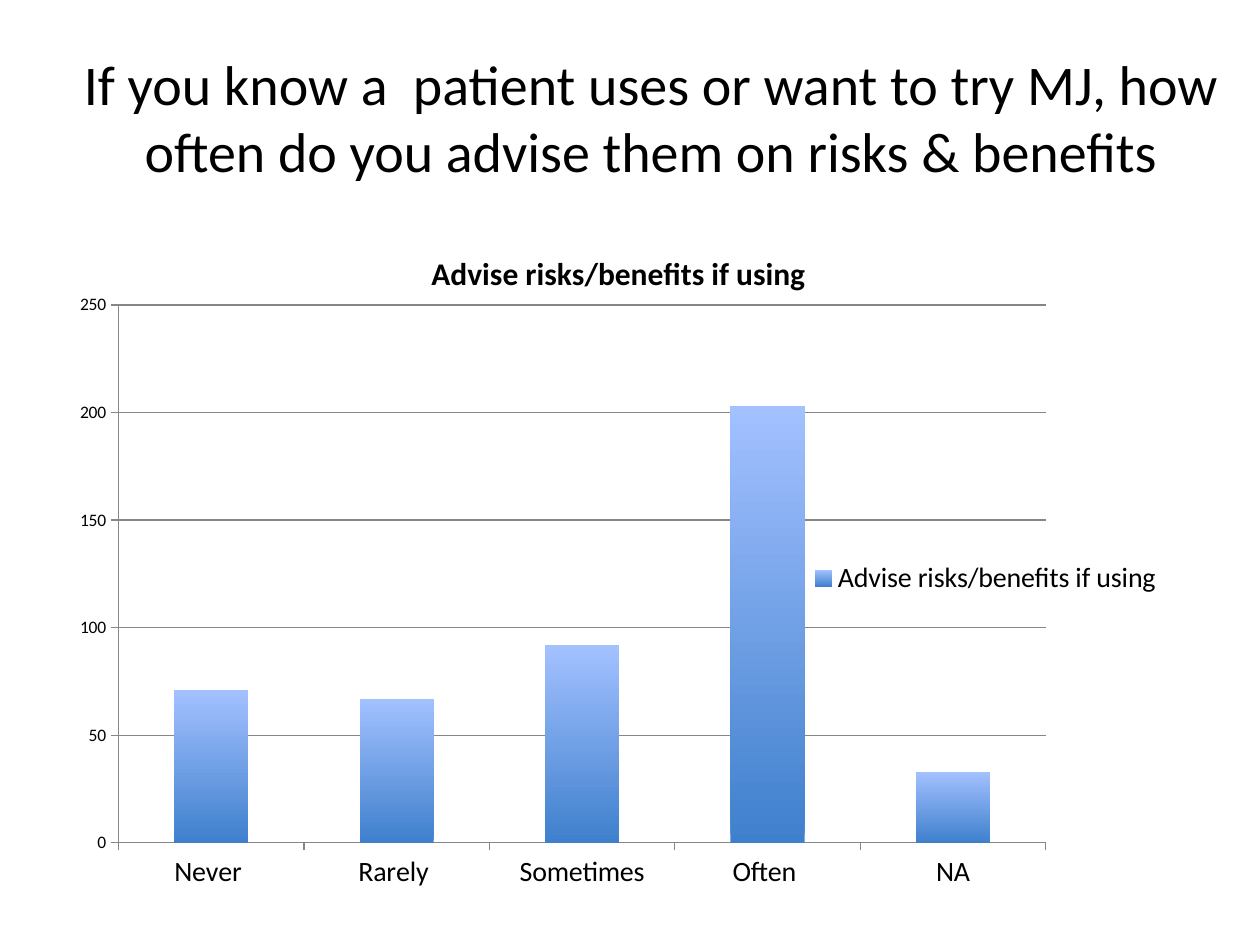
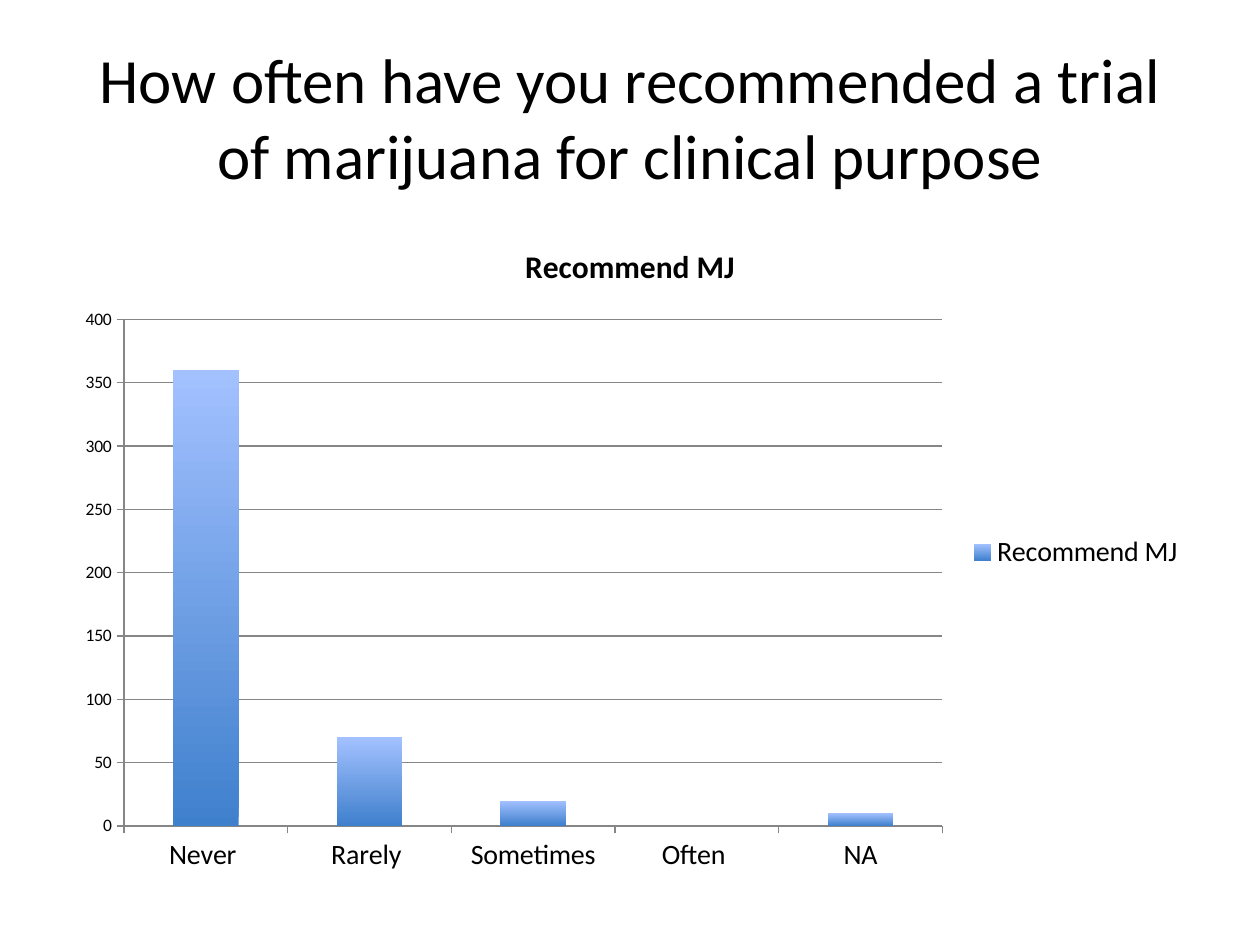
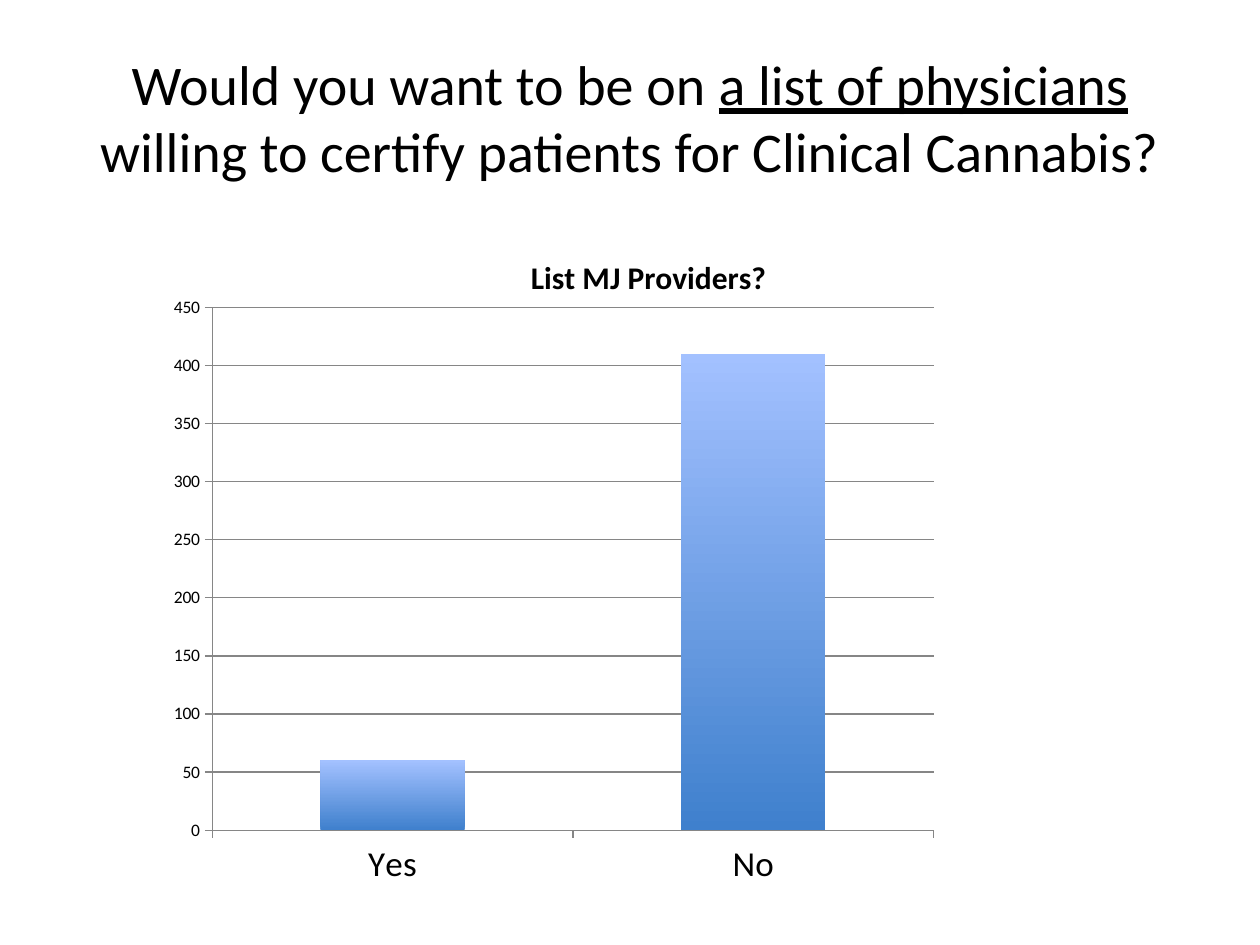
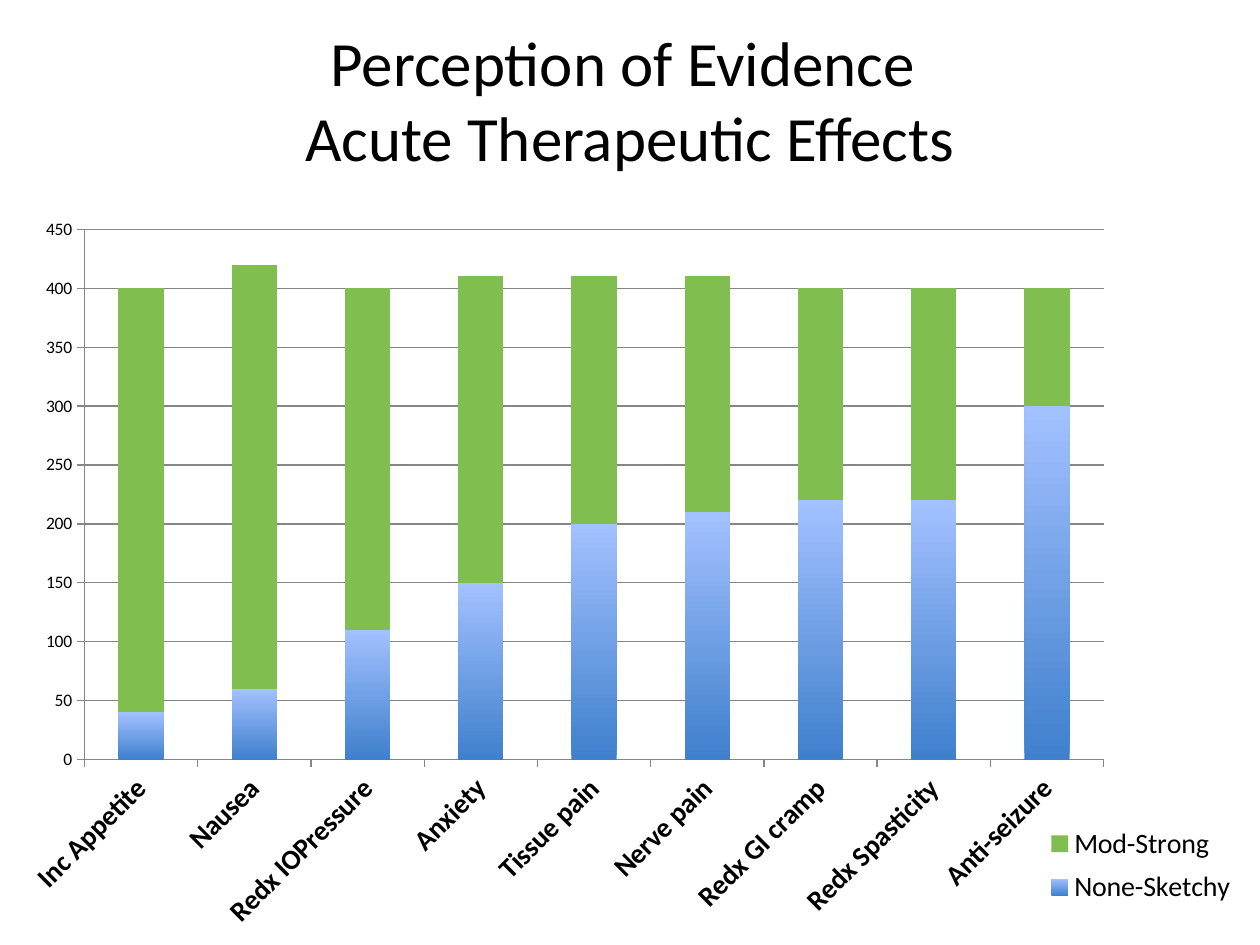
from lxml.etree import Element, SubElement
from pptx import Presentation
from pptx.chart.data import CategoryChartData
from pptx.dml.color import RGBColor
from pptx.enum.chart import XL_CHART_TYPE as CHART, XL_LEGEND_POSITION as LEGEND
from pptx.enum.chart import XL_TICK_MARK as TICK
from pptx.enum.text import MSO_ANCHOR as ANCHOR, PP_ALIGN as ALIGN
from pptx.oxml.ns import qn
from pptx.util import Pt

PX = 9144  # 100 px to the inch
FONT = "Calibri"
BLACK = RGBColor(0x00, 0x00, 0x00)
GRAY = RGBColor(0x86, 0x86, 0x86)
BLUE_DARK = RGBColor(0x3F, 0x80, 0xCD)
BLUE_LIGHT = RGBColor(0xA3, 0xC1, 0xFF)
GREEN = RGBColor(0x80, 0xBE, 0x50)

FREQUENCIES = ["Never ", "Rarely ", "Sometimes", "Often ", "NA"]
EFFECTS = ["Inc Appetite", "Nausea", "Redx IOPressure", "Anxiety", "Tissue pain",
           "Nerve pain", "Redx GI cramp", "Redx Spasticity", "Anti-seizure"]


def px(*lengths):
    return [n * PX for n in lengths]


def set_font(font, size, bold=False):
    font.name, font.size, font.bold = FONT, Pt(size), bold
    font.color.rgb = BLACK


def add_text(p, text, size, underline=False, bold=False):
    """Add a run; a newline in the text becomes a line break."""
    for i, line in enumerate(text.split("\n")):
        if i:
            p.add_line_break()
        r = p.add_run()
        r.text = line
        set_font(r.font, size, bold)
        if underline:
            r.font.underline = True


def add_title(slide, box, parts, size):
    """Parts are (text, underline) pairs."""
    tf = slide.shapes.add_textbox(*px(*box)).text_frame
    tf.word_wrap = True
    tf.vertical_anchor = ANCHOR.MIDDLE
    p = tf.paragraphs[0]
    p.alignment = ALIGN.CENTER
    for text, underline in parts:
        add_text(p, text, size, underline)


def set_layout(parent, index, box, chart_box, inner=False):
    """Place a chart part at a box in px from the chart's top left corner."""
    for old in parent.findall(qn("c:layout")):
        parent.remove(old)
    layout = Element(qn("c:layout"))
    parent.insert(index, layout)
    manual = SubElement(layout, qn("c:manualLayout"))
    width, height = chart_box[2:]
    fractions = [n / side for n, side in zip(box, (width, height) * 2)]
    values = [("layoutTarget", "inner")] if inner else []
    values += [("xMode", "edge"), ("yMode", "edge"), *zip("xywh", fractions)]
    for tag, value in values:
        SubElement(manual, qn(f"c:{tag}")).set("val", str(value))


def style_axes(chart, size, bold, angle):
    cat, val = chart.category_axis, chart.value_axis
    for axis in (cat, val):
        axis.major_tick_mark = TICK.OUTSIDE
        axis.format.line.color.rgb = GRAY
    set_font(cat.tick_labels.font, size, bold)
    if angle:
        body = cat._element.find(qn("c:txPr")).find(qn("a:bodyPr"))
        body.set("rot", str(angle * 60000))
    val.has_major_gridlines = True
    val.major_gridlines.format.line.color.rgb = GRAY


def fill_series(plot):
    plot.gap_width, plot.overlap = 150, 100
    plot.vary_by_categories = False
    first, *others = plot.series
    fill = first.format.fill
    fill.gradient()
    fill.gradient_angle = 90
    for stop, color in zip(fill.gradient_stops, (BLUE_DARK, BLUE_LIGHT)):
        stop.color.rgb = color
    for s in others:
        s.format.fill.solid()
        s.format.fill.fore_color.rgb = GREEN


def add_column_chart(slide, box, cats, series, title=None, plot_box=None, legend=True,
                     legend_box=None, cat_size=16, cat_bold=False, cat_angle=0):
    data = CategoryChartData()
    data.categories = cats
    for name, values in series.items():
        data.add_series(name, values)
    chart = slide.shapes.add_chart(CHART.COLUMN_STACKED, *px(*box), data).chart
    set_font(chart.font, 10)
    chart.has_title = title is not None
    if title:
        add_text(chart.chart_title.text_frame.paragraphs[0], title, 18, bold=True)
    style_axes(chart, cat_size, cat_bold, cat_angle)
    fill_series(chart.plots[0])
    if plot_box:
        set_layout(chart._chartSpace.chart.plotArea, 0, plot_box, box, inner=True)
    chart.has_legend = legend
    if legend:
        chart.legend.position = LEGEND.RIGHT
        chart.legend.include_in_layout = False
        set_font(chart.legend.font, 16)
        if legend_box:
            set_layout(chart.legend._element, 1, legend_box, box)


def add_chart_slide(prs, title_box, parts, size, chart_box, cats, series, **options):
    slide = prs.slides.add_slide(prs.slide_layouts[6])
    add_title(slide, title_box, parts, size)
    add_column_chart(slide, chart_box, cats, series, **options)


def main():
    prs = Presentation()
    prs.slide_width, prs.slide_height = px(1000, 750)

    advise = "Advise risks/benefits if using"
    add_chart_slide(
        prs, (50, 30, 934, 125),
        [("If you know a  patient uses or want to try MJ, how often do you advise "
          "them on risks & benefits", False)], 32,
        (50, 179, 882, 541), FREQUENCIES, {advise: (71, 67, 92, 203, 33)},
        title=advise, plot_box=(44, 63, 736, 427), legend_box=(603, 264, 273, 32))

    recommend = "Recommend MJ"
    add_chart_slide(
        prs, (50, 30, 900, 125),
        [("How often have you recommended a trial of marijuana for clinical purpose",
          False)], 36,
        (50, 174, 900, 529), FREQUENCIES, {recommend: (360, 70, 20, 0, 10)},
        title=recommend)

    providers = "List MJ Providers?"
    add_chart_slide(
        prs, (50, 30, 900, 125),
        [("Would you want to be on ", False), ("a list of physicians ", True),
         ("willing to certify patients for Clinical Cannabis?", False)], 32,
        (138, 182, 753, 537), ["Yes", "No"], {providers: (60, 410)},
        title=providers, plot_box=(30, 62, 573, 415), legend=False, cat_size=20)

    add_chart_slide(
        prs, (50, 16, 900, 125),
        [("Perception of Evidence \nAcute Therapeutic Effects", False)], 36,
        (15, 164, 971, 586), EFFECTS,
        {"None-Sketchy": (40, 60, 110, 150, 200, 210, 220, 220, 300),
         "Mod-Strong": (360, 360, 290, 260, 210, 200, 180, 180, 100)},
        plot_box=(52, 18, 809, 421), legend_box=(813, 485, 155, 76),
        cat_bold=True, cat_angle=-45)

    prs.save("out.pptx")


if __name__ == "__main__":
    main()
